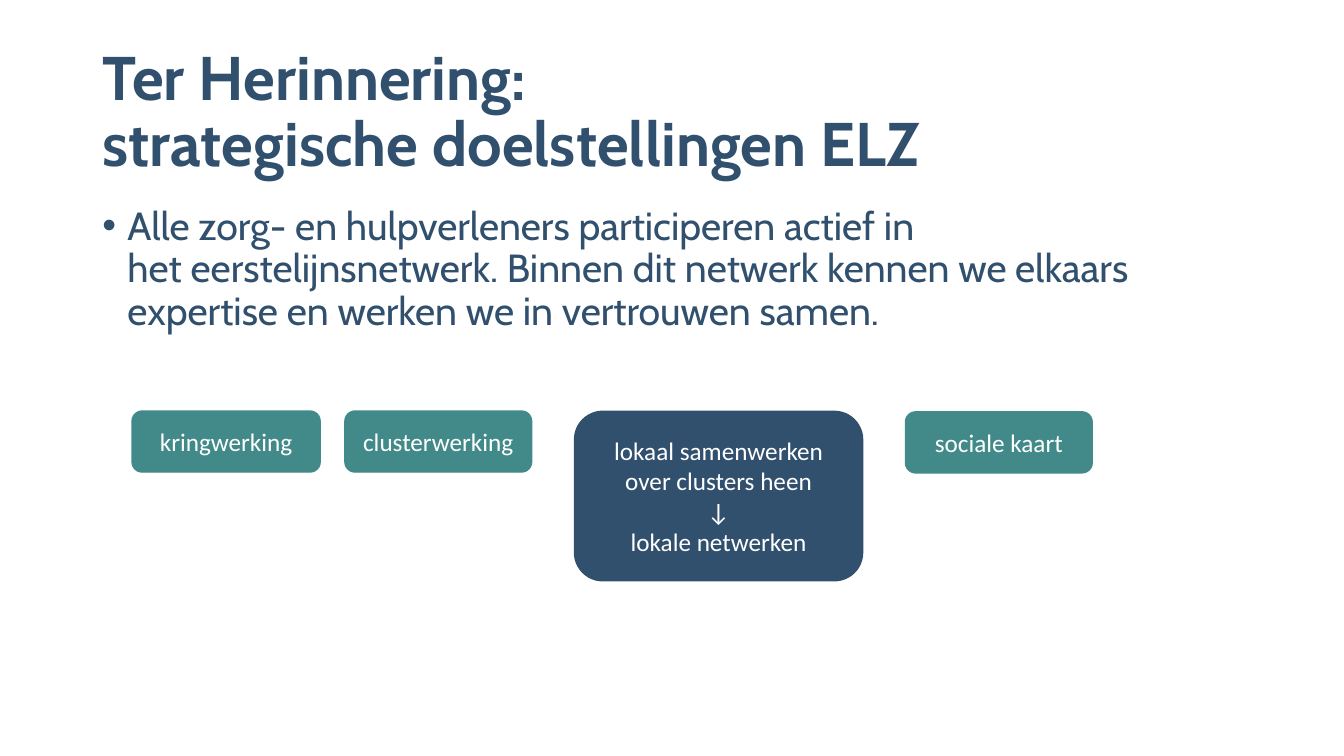
"""Build a slide on the strategic goals of the ELZ."""
from lxml.etree import SubElement
from pptx import Presentation
from pptx.dml.color import RGBColor
from pptx.enum.shapes import MSO_SHAPE
from pptx.enum.text import MSO_ANCHOR, MSO_AUTO_SIZE, PP_ALIGN
from pptx.oxml.ns import qn
from pptx.util import Pt

COLORS = {"navy": "31506E", "teal": "428A8A", "white": "FFFFFF"}
TITLE = ["Ter Herinnering:", "strategische doelstellingen ELZ"]
HARD = chr(160)
GOAL = (f"Alle zorg- en hulpverleners participeren actief in het{HARD}eerstelijnsnetwerk. "
        f"Binnen dit netwerk kennen we{HARD}elkaars expertise en werken we in vertrouwen samen.")
NETWORK = ["lokaal samenwerken over clusters heen", "↓", "lokale netwerken"]
BOXES = [
    (["kringwerking"], "teal", (94.3, 293.6, 134.4, 43.6)),
    (["clusterwerking"], "teal", (246.4, 293.6, 133.4, 43.6)),
    (NETWORK, "navy", (410.4, 293.8, 205.8, 121)),
    (["sociale kaart"], "teal", (646.8, 294.2, 133.4, 43.6)),
]
LEFT, WIDTH, INDENT = 66, 828, 18
HEAD = {"name": "Cabin", "size": Pt(44), "bold": True}
BODY = {"name": "Cabin", "size": Pt(28)}
LABEL = {"name": "Calibri", "size": Pt(18)}


def color(name):
    return RGBColor.from_string(COLORS[name])


def write(para, text, style, ink):
    run = para.add_run()
    run.text = text
    for key, value in style.items():
        setattr(run.font, key, value)
    run.font.color.rgb = color(ink)


def add_title(slide):
    title = slide.shapes.title
    place = {"left": LEFT, "top": 28.8, "width": WIDTH, "height": 104.4}
    for key, value in place.items():
        setattr(title, key, Pt(value))
    frame = title.text_frame
    frame.auto_size = MSO_AUTO_SIZE.NONE
    frame.vertical_anchor = MSO_ANCHOR.MIDDLE
    para = frame.paragraphs[0]
    para.alignment = PP_ALIGN.LEFT
    para.line_spacing = 0.9
    for index, line in enumerate(TITLE):
        if index:
            para.add_line_break()
        write(para, line, HEAD, "navy")


def add_goal(slide):
    box = slide.shapes.add_textbox(Pt(LEFT), Pt(144), Pt(WIDTH), Pt(342.7))
    frame = box.text_frame
    frame.word_wrap = True
    para = frame.paragraphs[0]
    props = para._p.get_or_add_pPr()
    props.set("marL", str(Pt(INDENT)))
    props.set("indent", str(-Pt(INDENT)))
    SubElement(props, qn("a:buFont")).set("typeface", "Arial")
    SubElement(props, qn("a:buChar")).set("char", "•")
    para.line_spacing = 0.9
    write(para, GOAL, BODY, "navy")


def add_box(slide, lines, fill, place):
    box = slide.shapes.add_shape(MSO_SHAPE.ROUNDED_RECTANGLE, *map(Pt, place))
    box.shadow.inherit = False
    box.fill.solid()
    box.fill.fore_color.rgb = color(fill)
    box.line.color.rgb = color(fill)
    box.line.width = Pt(1)
    frame = box.text_frame
    frame.word_wrap = True
    frame.vertical_anchor = MSO_ANCHOR.MIDDLE
    for index, line in enumerate(lines):
        para = frame.add_paragraph() if index else frame.paragraphs[0]
        para.alignment = PP_ALIGN.CENTER
        write(para, line, LABEL, "white")


def main():
    deck = Presentation()
    deck.slide_width, deck.slide_height = Pt(960), Pt(540)
    slide = deck.slides.add_slide(deck.slide_layouts[5])
    add_title(slide)
    add_goal(slide)
    for lines, fill, place in BOXES:
        add_box(slide, lines, fill, place)
    deck.save("out.pptx")


if __name__ == "__main__":
    main()
